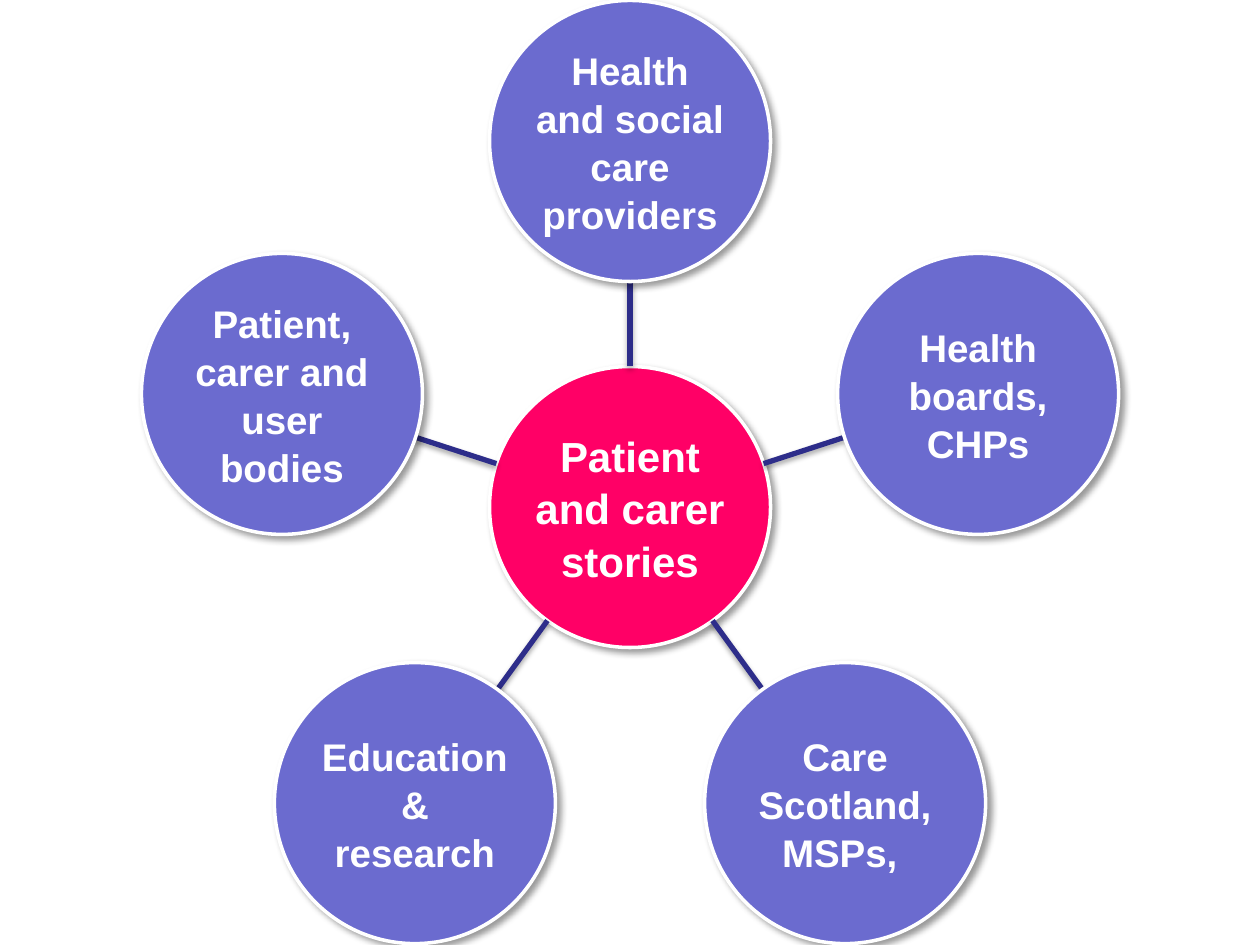
import math

from lxml import etree
from pptx import Presentation
from pptx import util as u
from pptx.dml.color import RGBColor
from pptx.enum import shapes, text
from pptx.oxml import ns

PX = u.Inches(1) / 126
COLORS = {"hub": "FF0066", "node": "6B6BCF", "spoke": "2D2D8A",
          "white": "FFFFFF", "shade": "000000"}
HUB = (630, 507)
SIZE = 281
ORBIT = 366
NODES = [
    ["Health and social care providers"],
    ["Health boards, CHPs"],
    ["Care Scotland, MSPs, "],
    ["Education ", "& research"],
    ["Patient, carer and user bodies"],
]


def px(n):
    return u.Emu(round(n * PX))


def rgb(name):
    return RGBColor.from_string(COLORS[name])


def apply(obj, values):
    for key, value in values.items():
        setattr(obj, key, value)


def polar(angle, dist):
    """Return the point at this angle and distance from the hub."""
    rad = math.radians(angle)
    return HUB[0] + dist * math.cos(rad), HUB[1] + dist * math.sin(rad)


class Wheel:
    FRAME = {"word_wrap": True, "vertical_anchor": text.MSO_ANCHOR.MIDDLE,
             "margin_left": px(2), "margin_right": px(2),
             "margin_top": px(2), "margin_bottom": px(2)}
    PARA = {"alignment": text.PP_ALIGN.CENTER, "line_spacing": 1.04}
    FONT = {"name": "Arial", "bold": True}

    def __init__(self, slide):
        self.items = slide.shapes

    def shade(self, shape, alpha, blur, dist, angle):
        """Give the shape an outer shadow: percent, points, degrees."""
        props = shape._element.spPr
        for old in props.findall(ns.qn("a:effectLst")):
            props.remove(old)
        effects = etree.SubElement(props, ns.qn("a:effectLst"))
        outer = etree.SubElement(
            effects, ns.qn("a:outerShdw"), blurRad=str(u.Pt(blur)),
            dist=str(u.Pt(dist)), dir=str(angle * 60000), rotWithShape="0")
        tint = etree.SubElement(outer, ns.qn("a:srgbClr"), val=COLORS["shade"])
        etree.SubElement(tint, ns.qn("a:alpha"), val=str(alpha * 1000))

    def stroke(self, line, color, width):
        line.color.rgb = rgb(color)
        line.width = u.Pt(width)

    def disc(self, center, lines, color, points):
        left, top = (c - SIZE / 2 for c in center)
        disc = self.items.add_shape(
            shapes.MSO_SHAPE.OVAL, px(left), px(top), px(SIZE), px(SIZE))
        disc.fill.solid()
        disc.fill.fore_color.rgb = rgb(color)
        self.stroke(disc.line, "white", 2)
        self.shade(disc, 40, 4, 3, 45)
        frame = disc.text_frame
        apply(frame, self.FRAME)
        for i, line in enumerate(lines):
            para = frame.add_paragraph() if i else frame.paragraphs[0]
            apply(para, self.PARA)
            run = para.add_run()
            run.text = line
            apply(run.font, self.FONT)
            run.font.size = u.Pt(points)
            run.font.color.rgb = rgb("white")

    def spoke(self, angle):
        ends = polar(angle, SIZE / 2) + polar(angle, ORBIT - SIZE / 2)
        spoke = self.items.add_connector(
            shapes.MSO_CONNECTOR.STRAIGHT, *map(px, ends))
        self.stroke(spoke.line, "spoke", 3)
        self.shade(spoke, 35, 3.1, 1.8, 90)


def main():
    deck = Presentation()
    deck.slide_width, deck.slide_height = px(1260), px(945)
    wheel = Wheel(deck.slides.add_slide(deck.slide_layouts[6]))
    wheel.disc(HUB, ["Patient and carer stories"], "hub", 24)
    for i, lines in enumerate(NODES):
        angle = i * 360 / len(NODES) - 90
        wheel.spoke(angle)
        wheel.disc(polar(angle, ORBIT), lines, "node", 22)
    deck.save("out.pptx")


if __name__ == "__main__":
    main()
